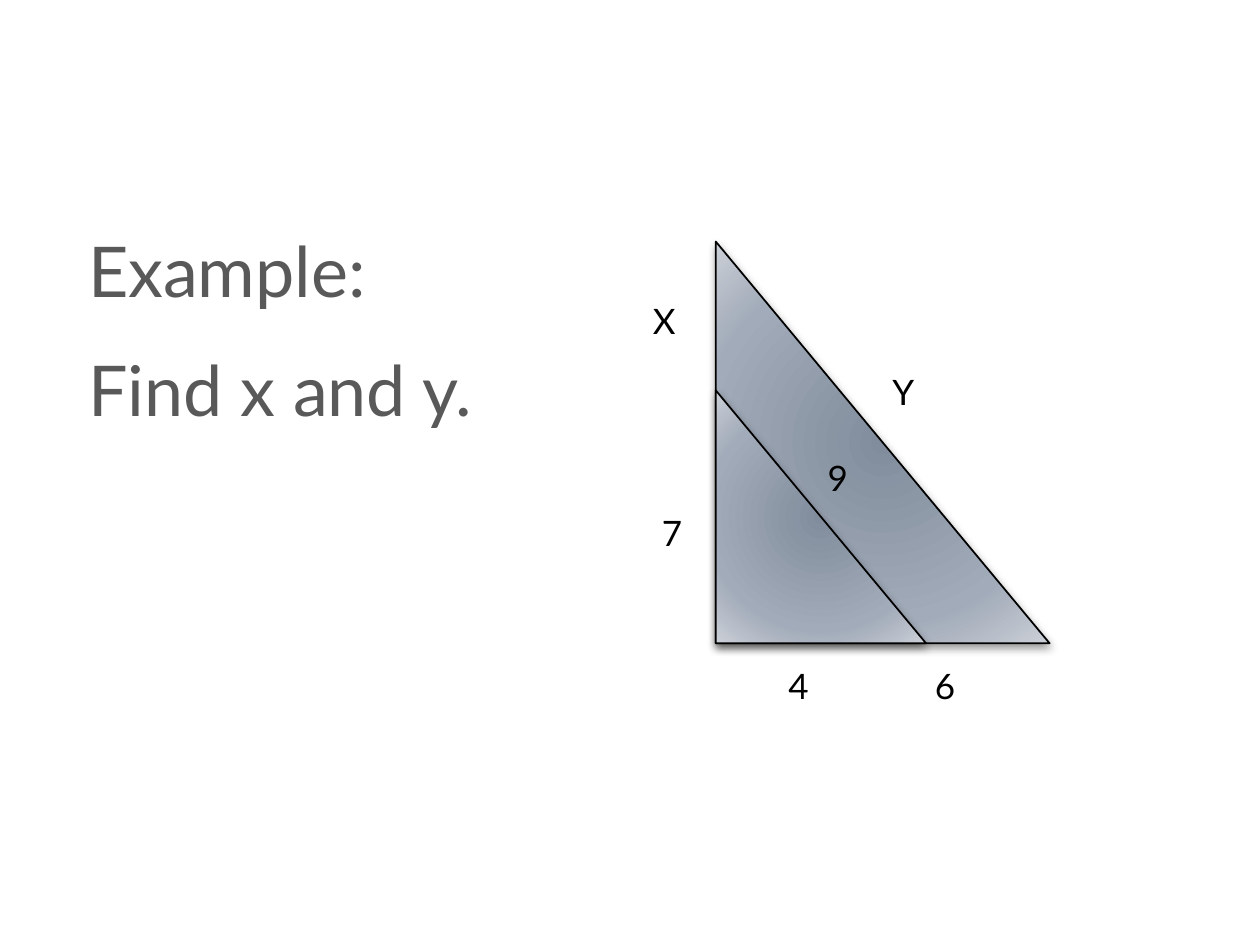
from pptx import Presentation
from pptx import util as u
from pptx.dml.color import RGBColor
from pptx.enum import shapes, text
from pptx.oxml import parse_xml
from pptx.oxml.ns import nsdecls

BLACK = RGBColor(0x00, 0x00, 0x00)
GREY = RGBColor(0x59, 0x59, 0x59)
FONT = "Lato"
GRADIENT = f"""<a:gradFill {nsdecls('a')} rotWithShape="1"><a:gsLst>
<a:gs pos="0"><a:srgbClr val="818D9D"/></a:gs>
<a:gs pos="69000"><a:srgbClr val="A2ABB9"/></a:gs>
<a:gs pos="100000"><a:srgbClr val="CCD0D7"/></a:gs></a:gsLst>
<a:path path="circle"><a:fillToRect l="50000" t="50000" r="50000" b="50000"/></a:path>
</a:gradFill>"""
SHADOW = f"""<a:outerShdw {nsdecls('a')} blurRad="63500" dist="25400" dir="5400000"
rotWithShape="0"><a:srgbClr val="000000"><a:alpha val="40000"/></a:srgbClr></a:outerShdw>"""


def write(para, content, size, color, align=text.PP_ALIGN.LEFT, before=0):
    para.alignment = align
    para.space_before = u.Pt(before)
    span = para.add_run()
    span.text = content
    span.font.name = FONT
    span.font.size = u.Pt(size)
    span.font.color.rgb = color


deck = Presentation()
deck.slide_width, deck.slide_height = u.Cm(25.4), u.Cm(19.05)
page = deck.slides.add_slide(deck.slide_layouts[1])
title = page.shapes.title
title.element.getparent().remove(title.element)

# Task statement, without bullets
body = page.placeholders[1]
body.left, body.top = u.Cm(1.52), u.Cm(4.45)
body.width, body.height = u.Cm(22.35), u.Cm(12.07)
for number, line in enumerate(["Example:", "Find x and y."]):
    frame = body.text_frame
    para = frame.add_paragraph() if number else frame.paragraphs[0]
    write(para, line, 40, GREY, before=20)
    settings = para._p.get_or_add_pPr()
    settings.set("marL", "0")
    settings.set("indent", "0")
    settings.append(parse_xml(f"<a:buNone {nsdecls('a')}/>"))

# Similar triangles that share the right-angle corner
CORNER_X, CORNER_Y = 14.43, 12.97
for width, height in [(6.73, 8.1), (4.24, 5.1)]:
    triangle = page.shapes.add_shape(
        shapes.MSO_SHAPE.RIGHT_TRIANGLE, u.Cm(CORNER_X), u.Cm(CORNER_Y - height),
        u.Cm(width), u.Cm(height))
    triangle.shadow.inherit = False
    triangle.line.color.rgb = BLACK
    triangle.line.width = u.Pt(1)
    properties = triangle.element.spPr
    properties.insert(2, parse_xml(GRADIENT))
    properties[-1].append(parse_xml(SHADOW))

# Side lengths, each placed by its centre
LABEL_WIDTH, LABEL_HEIGHT = 1, 1.12
labels = [("X", 13.39, 6.48), ("7", 13.55, 10.74), ("9", 16.89, 9.63),
          ("Y", 18.21, 7.9), ("4", 16.1, 13.84), ("6", 19.05, 13.84)]
for label, x, y in labels:
    box = page.shapes.add_textbox(
        u.Cm(x - LABEL_WIDTH / 2), u.Cm(y - LABEL_HEIGHT / 2),
        u.Cm(LABEL_WIDTH), u.Cm(LABEL_HEIGHT))
    box.text_frame.word_wrap = True
    write(box.text_frame.paragraphs[0], label, 20, BLACK, align=text.PP_ALIGN.CENTER)

deck.save("out.pptx")
